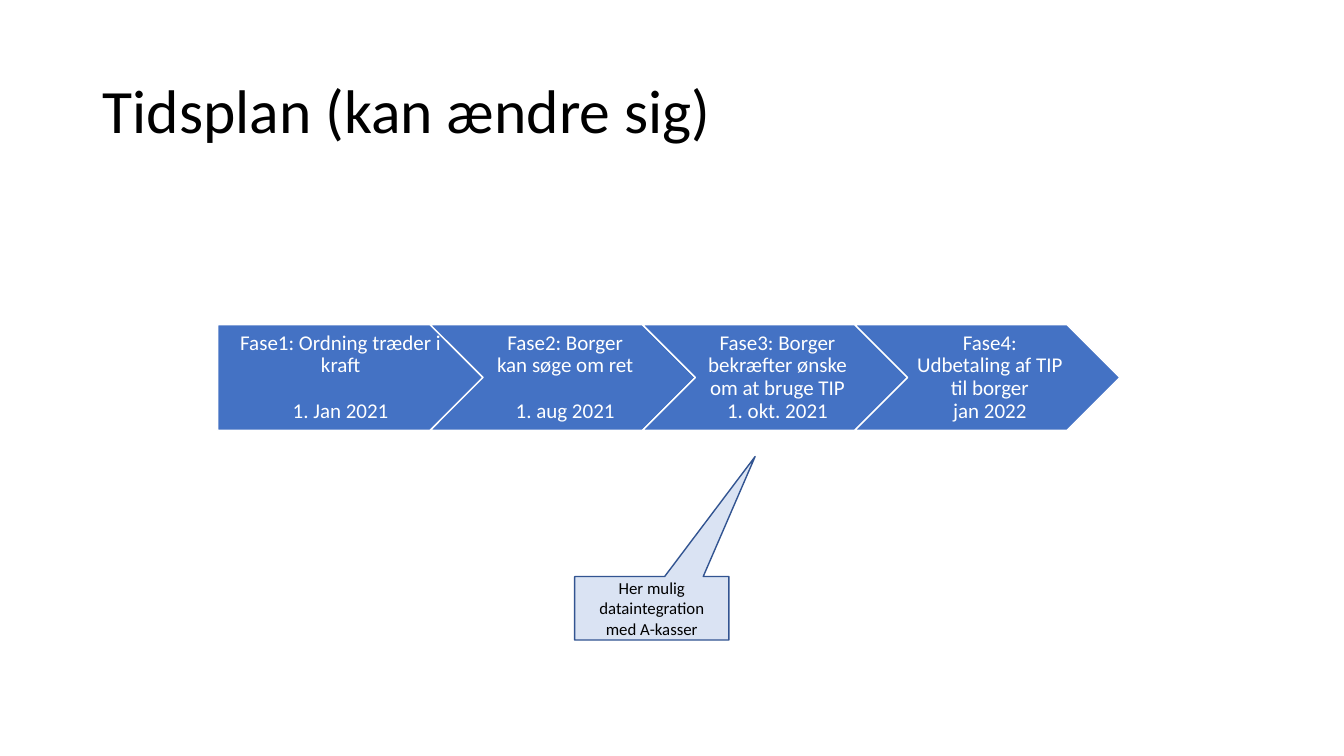
import pptx
import pptx.util
import pptx.dml.color
import pptx.enum.shapes
import pptx.enum.text

Inches = pptx.util.Inches
Pt = pptx.util.Pt
SHAPES = pptx.enum.shapes.MSO_SHAPE
ALIGN = pptx.enum.text.PP_ALIGN


def color(hex_value):
    return pptx.dml.color.RGBColor.from_string(hex_value)


def add_run(paragraph, text, size, hex_value):
    run = paragraph.add_run()
    run.text = text
    run.font.name = "Calibri"
    run.font.size = Pt(size)
    run.font.color.rgb = color(hex_value)


presentation = pptx.Presentation()
presentation.slide_width = Inches(13.33)
presentation.slide_height = Inches(7.5)
slide = presentation.slides.add_slide(presentation.slide_layouts[5])

# Title
title = slide.shapes.title
title.left, title.top = Inches(0.92), Inches(0.4)
title.width, title.height = Inches(11.5), Inches(1.45)
title.text_frame.auto_size = pptx.enum.text.MSO_AUTO_SIZE.NONE
title.text_frame.vertical_anchor = pptx.enum.text.MSO_ANCHOR.MIDDLE
heading = title.text_frame.paragraphs[0]
heading.alignment = ALIGN.LEFT
heading.line_spacing = 0.9
add_run(heading, "Tidsplan (kan ændre sig)", 44, "000000")

# Timeline: phase, date and the gap in points between them
phases = [
    ("Fase1: Ordning træder i kraft", "1. Jan 2021", 16.5),
    ("Fase2: Borger kan søge om ret", "1. aug 2021", 16.5),
    ("Fase3: Borger bekræfter ønske om at bruge TIP", "1. okt. 2021", 0),
    ("Fase4: Udbetaling af TIP til borger", "jan 2022", 0),
]
phase_left, phase_step = 2.16, 2.106
for index, (phase, date, gap) in enumerate(phases):
    arrow = slide.shapes.add_shape(
        SHAPES.CHEVRON if index else SHAPES.PENTAGON,
        Inches(phase_left + index * phase_step), Inches(3.22),
        Inches(2.63), Inches(1.05))
    arrow.shadow.inherit = False
    arrow.fill.solid()
    arrow.fill.fore_color.rgb = color("4472C4")
    arrow.line.color.rgb = color("FFFFFF")
    arrow.line.width = Pt(1)
    frame = arrow.text_frame
    frame.word_wrap = True
    frame.vertical_anchor = pptx.enum.text.MSO_ANCHOR.MIDDLE
    frame.margin_left = Inches(0.07 if index else 0.09)
    frame.margin_right = Inches(0.02)
    frame.margin_top = frame.margin_bottom = Inches(0.04)
    phase_line, date_line = frame.paragraphs[0], frame.add_paragraph()
    date_line.space_before = Pt(gap)
    for paragraph, text in ((phase_line, phase), (date_line, date)):
        paragraph.alignment = ALIGN.CENTER
        paragraph.line_spacing = 0.9
        add_run(paragraph, text, 15, "FFFFFF")

# Callout pointing at phase 3
callout = slide.shapes.add_shape(
    SHAPES.RECTANGULAR_CALLOUT,
    Inches(5.7), Inches(5.72), Inches(1.53), Inches(0.63))
callout.adjustments[0] = 0.67
callout.adjustments[1] = -2.39
callout.shadow.inherit = False
callout.fill.solid()
callout.fill.fore_color.rgb = color("DAE3F3")
callout.line.color.rgb = color("325491")
callout.line.width = Pt(1)
callout.text_frame.word_wrap = True
callout.text_frame.vertical_anchor = pptx.enum.text.MSO_ANCHOR.MIDDLE
note = callout.text_frame.paragraphs[0]
note.alignment = ALIGN.CENTER
add_run(note, "Her mulig dataintegration med A-kasser", 12, "000000")

presentation.save("out.pptx")
